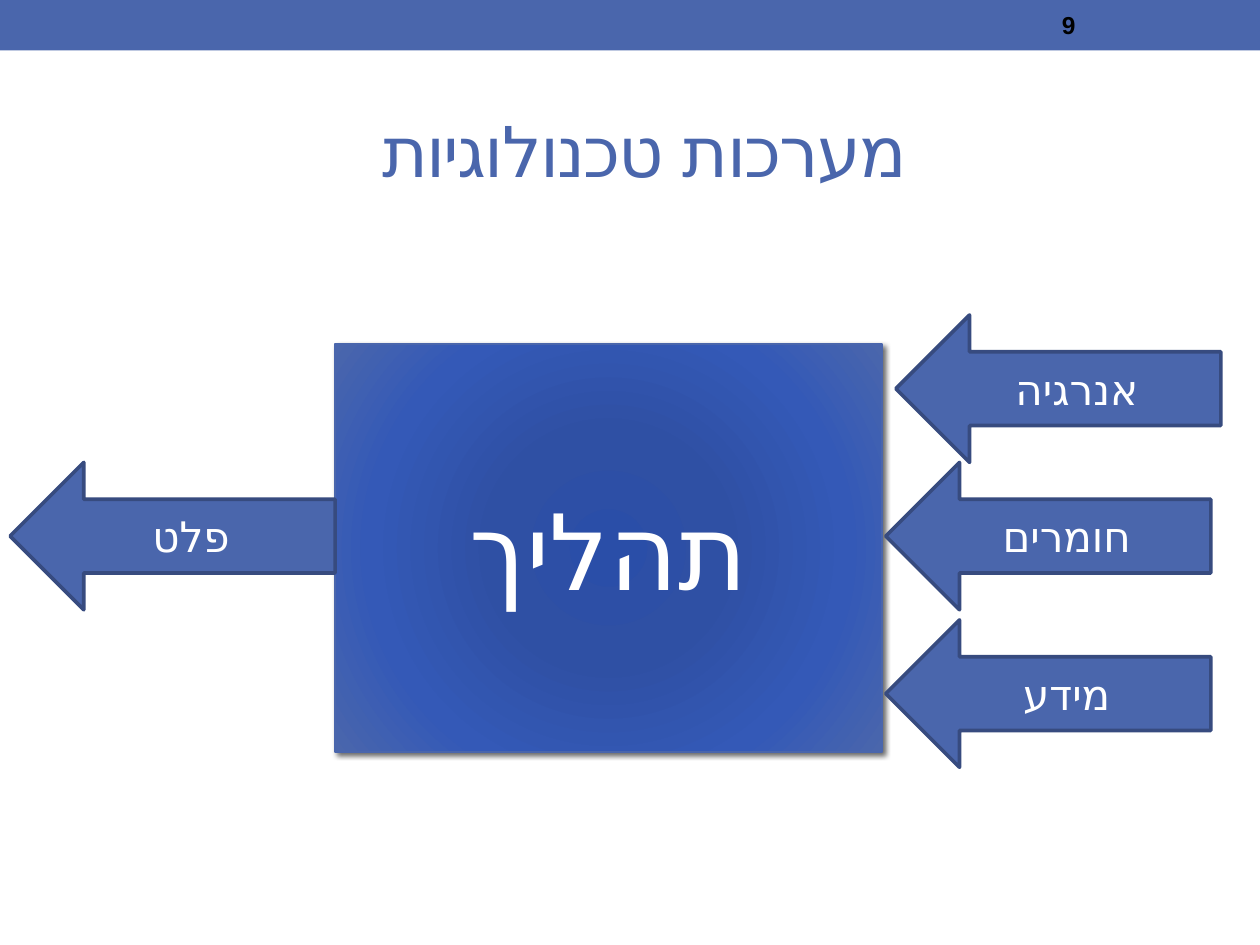
from dataclasses import dataclass

from lxml import etree
from pptx import Presentation
from pptx.dml.color import RGBColor
from pptx.enum.shapes import MSO_SHAPE
from pptx.enum.text import MSO_ANCHOR, PP_ALIGN
from pptx.oxml import parse_xml
from pptx.oxml.ns import nsdecls, qn
from pptx.shapes.autoshape import Shape
from pptx.slide import Slide
from pptx.util import Inches, Pt

RECTANGLE = MSO_SHAPE.RECTANGLE
LEFT_ARROW = MSO_SHAPE.LEFT_ARROW
MIDDLE = MSO_ANCHOR.MIDDLE
CENTER = PP_ALIGN.CENTER
LEFT = PP_ALIGN.LEFT


@dataclass(frozen=True)
class Theme:
    accent: str = "4A66AC"
    outline: str = "374B7F"
    white: str = "FFFFFF"
    black: str = "000000"
    process_stops: tuple = ((0, "2A4EA8"), (34, "2F50A4"), (70, "3459B7"), (100, "4A66AC"))
    latin_font: str = "Arial"
    hebrew_font: str = "DejaVu Sans"
    title_size: int = 40
    process_size: int = 60
    arrow_size: int = 24
    number_size: int = 14


@dataclass(frozen=True)
class Box:
    left: float
    top: float
    width: float
    height: float

    def lengths(self) -> tuple:
        return tuple(Inches(v) for v in (self.left, self.top, self.width, self.height))


@dataclass(frozen=True)
class FlowArrow:
    label: str
    left: float
    top: float


THEME = Theme()
ARROW_WIDTH, ARROW_HEIGHT = 2.58, 1.17
PROCESS_BOX = Box(2.66, 2.73, 4.34, 3.24)
ARROWS = (
    FlowArrow("אנרגיה", 7.11, 2.5),
    FlowArrow("פלט", PROCESS_BOX.left - ARROW_WIDTH, 3.67),
    FlowArrow("חומרים", 7.03, 3.67),
    FlowArrow("מידע", 7.03, 4.92),
)


def write_text(shape: Shape, text: str, size: int, color: str, align=CENTER,
               latin: str = THEME.latin_font, complex_font: str = THEME.hebrew_font,
               bold: bool = False, wrap: bool = True) -> None:
    """Fill a shape with one right-to-left paragraph."""
    frame = shape.text_frame
    frame.word_wrap = wrap
    frame.vertical_anchor = MIDDLE
    para = frame.paragraphs[0]
    para.text = text
    para.alignment = align
    para._p.get_or_add_pPr().set("rtl", "1")
    para.font.size = Pt(size)
    para.font.bold = bold
    para.font.color.rgb = RGBColor.from_string(color)
    # Run-level fonts hold the complex-script face that Hebrew uses
    span = para.runs[0]
    span.font.name = latin
    etree.SubElement(span._r.get_or_add_rPr(), qn("a:cs"), typeface=complex_font)


def add_text_box(slide: Slide, box: Box) -> Shape:
    return slide.shapes.add_textbox(*box.lengths())


def add_filled_shape(slide: Slide, preset, box: Box, line_color: str = "",
                     line_width: float = 0) -> Shape:
    shape = slide.shapes.add_shape(preset, *box.lengths())
    shape.shadow.inherit = False
    shape.fill.solid()
    shape.fill.fore_color.rgb = RGBColor.from_string(THEME.accent)
    if line_color:
        shape.line.color.rgb = RGBColor.from_string(line_color)
        shape.line.width = Pt(line_width)
    else:
        shape.line.fill.background()
    return shape


def add_radial_fill(shape: Shape) -> None:
    stops = "".join(
        f'<a:gs pos="{position * 1000}"><a:srgbClr val="{color}"/></a:gs>'
        for position, color in THEME.process_stops)
    gradient = parse_xml(
        f'<a:gradFill {nsdecls("a")} rotWithShape="1"><a:gsLst>{stops}</a:gsLst>'
        '<a:path path="circle"><a:fillToRect l="100000" t="100000" r="100000" b="100000"/>'
        '</a:path></a:gradFill>')
    properties = shape._element.spPr
    properties.replace(properties.find(qn("a:solidFill")), gradient)


def add_drop_shadow(shape: Shape) -> None:
    effects = shape._element.spPr.find(qn("a:effectLst"))
    effects.append(parse_xml(
        f'<a:outerShdw {nsdecls("a")} blurRad="{Pt(3)}" dist="{Pt(2)}" dir="2700000" '
        f'algn="br" rotWithShape="0"><a:srgbClr val="{THEME.black}">'
        '<a:alpha val="60000"/></a:srgbClr></a:outerShdw>'))


def add_flow_arrow(slide: Slide, arrow: FlowArrow) -> None:
    box = Box(arrow.left, arrow.top, ARROW_WIDTH, ARROW_HEIGHT)
    shape = add_filled_shape(slide, LEFT_ARROW, box, THEME.outline, 2.08)
    write_text(shape, arrow.label, THEME.arrow_size, THEME.white)


def main() -> None:
    deck = Presentation()
    deck.slide_width, deck.slide_height = Inches(10), Inches(7.5)
    page = deck.slides.add_slide(deck.slide_layouts[6])

    # Top band, title and page number
    add_filled_shape(page, RECTANGLE, Box(0, 0, 10, 0.4))
    title = add_text_box(page, Box(0.23, 0.36, 9.61, 1.66))
    write_text(title, "מערכות טכנולוגיות ", THEME.title_size, THEME.accent)
    title.text_frame.paragraphs[0].runs[0]._r.get_or_add_rPr().set("spc", "-100")
    number = add_text_box(page, Box(8.33, 0.02, 1.17, 0.36))
    write_text(number, "9", THEME.number_size, THEME.black, LEFT,
               latin=THEME.hebrew_font, complex_font=THEME.latin_font, bold=True)

    # Process in the middle
    process = add_filled_shape(page, RECTANGLE, PROCESS_BOX, THEME.accent, 0.75)
    add_radial_fill(process)
    add_drop_shadow(process)
    write_text(process, "תהליך", THEME.process_size, THEME.white, wrap=False)

    # Inputs and output
    for arrow in ARROWS:
        add_flow_arrow(page, arrow)

    deck.save("out.pptx")


if __name__ == "__main__":
    main()
